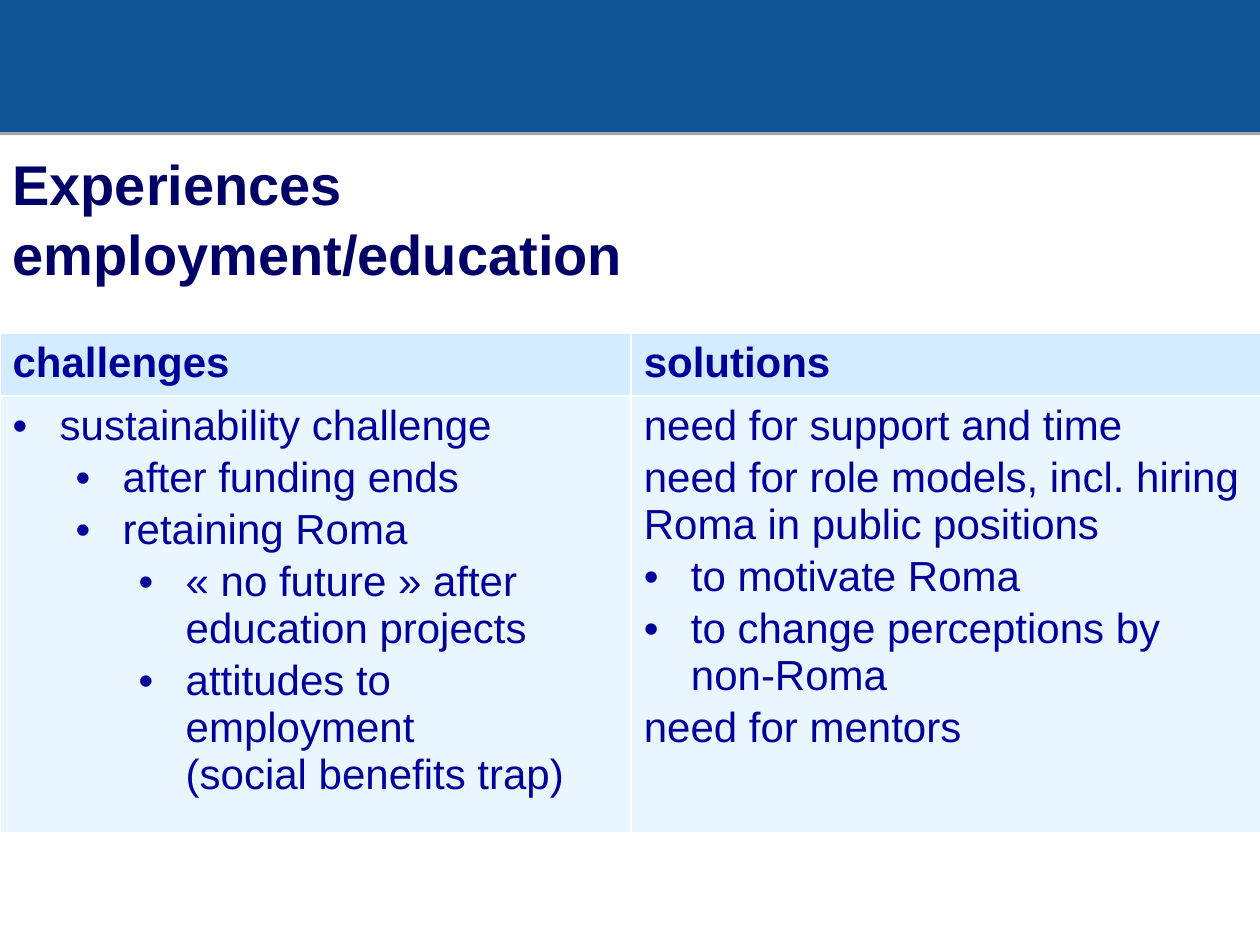
from typing import NamedTuple

from lxml import etree
from pptx import Presentation
from pptx.dml.color import RGBColor
from pptx.enum import shapes, text
from pptx.oxml.ns import qn
from pptx.util import Cm, Pt

FONT = "Arial"
BLUE, NAVY, INK, WHITE = "0F5494", "000066", "000099", "FFFFFF"
HEAD_FILL, BODY_FILL = "D3ECFF", "EAF6FF"
WIDTH = 25.4
HANG = 0.95
STEP = 1.27


class Item(NamedTuple):
    text: str
    level: int | None = None  # None means no bullet
    bold: bool = False


class Column(NamedTuple):
    head: str
    items: list[Item]


COLUMNS = [
    Column("challenges", [
        Item("sustainability challenge", 0),
        Item("after funding ends", 1),
        Item("retaining Roma", 1),
        Item("«\u00a0no future\u00a0» after education projects", 2),
        Item("attitudes to employment\v(social benefits trap)", 2),
    ]),
    Column("solutions", [
        Item("need for support and time"),
        Item("need for role models, incl. hiring Roma in public positions"),
        Item("to motivate Roma", 0),
        Item("to change perceptions by non-Roma", 0),
        Item("need for mentors"),
    ]),
]


def rgb(code: str) -> RGBColor:
    return RGBColor.from_string(code)


def write(p, content: str, *, size: float, color: str, bold=False, after=0.0, spacing=None):
    p.text = content
    p.alignment = text.PP_ALIGN.LEFT
    p.space_after = Pt(after)
    p.line_spacing = spacing
    for r in p.runs:
        r.font.name = FONT
        r.font.size = Pt(size)
        r.font.bold = bold
        r.font.color.rgb = rgb(color)


def add_bullet(p, level: int):
    p.level = level
    pPr = p._p.get_or_add_pPr()
    pPr.set("marL", str(Cm(HANG + level * STEP)))
    pPr.set("indent", str(-Cm(HANG)))
    etree.SubElement(pPr, qn("a:buFont"), typeface=FONT)
    etree.SubElement(pPr, qn("a:buChar"), char="•")


def add_borders(cell):
    """Give the cell thin white lines on all four sides."""
    tcPr = cell._tc.get_or_add_tcPr()
    for i, side in enumerate(("a:lnL", "a:lnR", "a:lnT", "a:lnB")):
        ln = etree.Element(qn(side), w=str(Pt(1)))
        fill = etree.SubElement(ln, qn("a:solidFill"))
        etree.SubElement(fill, qn("a:srgbClr"), val=WHITE)
        tcPr.insert(i, ln)


def fill_cell(cell, items: list[Item], fill: str):
    cell.fill.solid()
    cell.fill.fore_color.rgb = rgb(fill)
    add_borders(cell)
    tf = cell.text_frame
    for i, item in enumerate(items):
        p = tf.add_paragraph() if i else tf.paragraphs[0]
        write(p, item.text, size=24, color=INK, bold=item.bold, after=3)
        if item.level is not None:
            add_bullet(p, item.level)


def add_band(s):
    """Draw the blue band with its soft shadow along the top."""
    sp = s.shapes.add_shape(shapes.MSO_SHAPE.RECTANGLE, 0, Cm(-0.08), Cm(WIDTH), Cm(2.74))
    sp.fill.solid()
    sp.fill.fore_color.rgb = rgb(BLUE)
    sp.line.fill.background()
    sp.shadow.inherit = False
    effects = sp._element.spPr.find(qn("a:effectLst"))
    shadow = etree.SubElement(effects, qn("a:outerShdw"), blurRad="0", dist=str(Pt(1.8)),
                              dir="5400000", rotWithShape="0")
    color = etree.SubElement(shadow, qn("a:srgbClr"), val="000000")
    etree.SubElement(color, qn("a:alpha"), val="35000")


def add_title(s, content: str):
    sp = s.shapes.add_textbox(0, Cm(2.72), Cm(WIDTH), Cm(3.99))
    tf = sp.text_frame
    tf.word_wrap = True
    tf.margin_top = Cm(0.25)
    write(tf.paragraphs[0], content, size=32, color=NAVY, bold=True, spacing=1.04)


def add_columns(s, columns: list[Column]):
    frame = s.shapes.add_table(2, len(columns), 0, Cm(6.71), Cm(25.45), Cm(9.53))
    table = frame.table
    table.rows[0].height, table.rows[1].height = Cm(1.22), Cm(8.31)
    for i, column in enumerate(columns):
        fill_cell(table.cell(0, i), [Item(column.head, bold=True)], HEAD_FILL)
        fill_cell(table.cell(1, i), column.items, BODY_FILL)


def main():
    prs = Presentation()
    prs.slide_width, prs.slide_height = Cm(WIDTH), Cm(19.05)
    s = prs.slides.add_slide(prs.slide_layouts[6])
    add_band(s)
    add_title(s, "Experiences\vemployment/education")
    add_columns(s, COLUMNS)
    prs.save("out.pptx")


if __name__ == "__main__":
    main()
